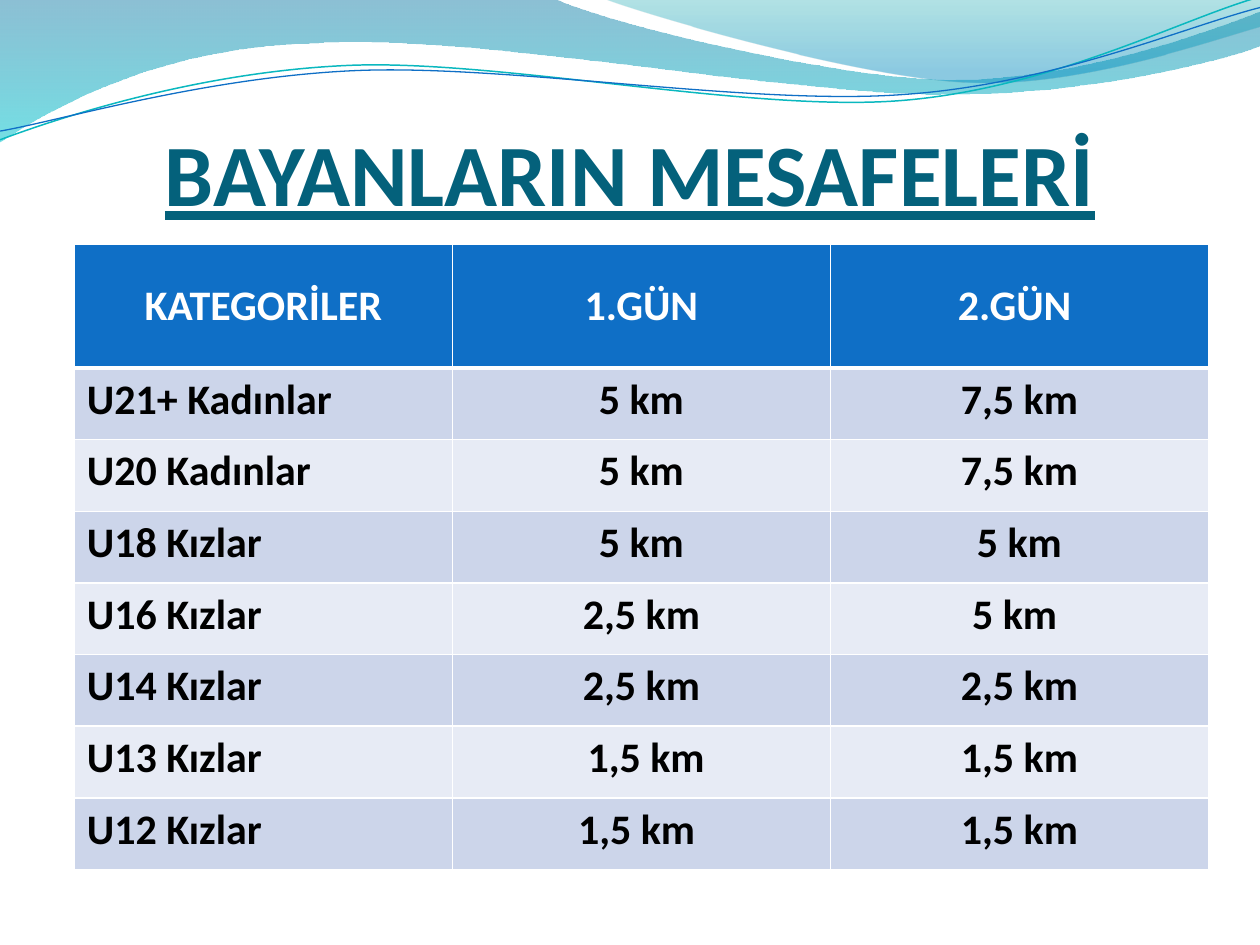
"""Build the slide listing the women's race distances by category."""
from lxml import etree
from pptx import Presentation
from pptx.dml.color import RGBColor
from pptx.enum import text
from pptx.oxml.ns import qn
from pptx.util import Pt

FONT = "Calibri"
WHITE = RGBColor(0xFF, 0xFF, 0xFF)
BLACK = RGBColor(0x00, 0x00, 0x00)
TITLE_TEAL = RGBColor(0x04, 0x61, 0x7B)
BLUE = RGBColor(0x0F, 0x6F, 0xC6)
CYAN = RGBColor(0x0A, 0xB8, 0xBF)
BAND_DARK = RGBColor(0xCC, 0xD5, 0xEA)
BAND_LIGHT = RGBColor(0xE7, 0xEB, 0xF5)
WAVE_TOP = RGBColor(0x00, 0x74, 0xA1)
WAVE_BOTTOM = RGBColor(0x00, 0xC6, 0xCF)
CREST_TOP = RGBColor(0x00, 0xA1, 0xA9)
CREST_BOTTOM = RGBColor(0x00, 0x8B, 0xBF)

HEADER_HEIGHT, ROW_HEIGHT, COLUMN_WIDTH = 70.5, 40.95, 216

WAVE = [
    [(0, 0)],
    [(316.8, -0.7)],
    [(342.7, 12.2), (478.1, 45.4), (545.8, 45.4)],
    [(614.2, 45.4), (689.8, 18.7), (720, 6.5)],
    [(720.7, 25.9)],
    [(707.8, 31.7), (626.4, 54.7), (537.1, 54)],
    [(447.8, 54), (275, 20.2), (185, 24.5)],
    [(92.9, 25.9), (33.1, 59.8), (-0.7, 81.4)],
    [(0, 0)],
]
CREST = [
    [(344.9, -0.7)],
    [(366.5, 7.9), (491, 44.6), (553.7, 46.8)],
    [(616.3, 49.7), (691.9, 23), (720, 15.1)],
    [(720, 0)],
    [(344.9, -0.7)],
]
CYAN_LINE = [
    [(0, 79.9)],
    [(34.6, 67), (113.8, 41), (199.4, 37.4)],
    [(284.4, 33.8), (427, 64.1), (513.4, 57.6)],
    [(599.8, 51.1), (675.4, 10.8), (718.6, -1.4)],
]
BLUE_LINE = [
    [(0, 74.9)],
    [(33.8, 69.1), (118.1, 43.9), (203.8, 40.3)],
    [(290.2, 36.7), (429.8, 60.5), (516.2, 54)],
    [(601.9, 48.2), (677.5, 15.1), (720, 4.3)],
]

DISTANCES = [
    ("KATEGORİLER", "1.GÜN", "2.GÜN "),
    ("U21+ Kadınlar", "5 km", "7,5 km"),
    ("U20 Kadınlar", "5 km", "7,5 km"),
    ("U18 Kızlar", "5 km", "5 km"),
    ("U16 Kızlar", "2,5 km", "5 km "),
    ("U14 Kızlar", "2,5 km", "2,5 km"),
    ("U13 Kızlar", " 1,5 km", "1,5 km"),
    ("U12 Kızlar", "1,5 km ", "1,5 km"),
]


def bend_segments(shape, segments):
    """Merge the three lines of every cubic segment into one Bezier curve."""
    lines = iter(list(shape._element.iter(qn("a:lnTo"))))
    for segment in segments[1:]:
        first, *others = [next(lines) for _ in segment]
        if others:
            first.addprevious(curve := etree.Element(qn("a:cubicBezTo")))
            for line in (first, *others):
                curve.append(line[0])
                line.getparent().remove(line)


def add_outline(slide, segments, close):
    """Add an unshadowed freeform along straight and cubic segments."""
    start, *others = [(Pt(x), Pt(y)) for segment in segments for x, y in segment]
    builder = slide.shapes.build_freeform(*start)
    builder.add_line_segments(others, close=close)
    shape = builder.convert_to_shape()
    bend_segments(shape, segments)
    shape.shadow.inherit = False
    return shape


def add_wave(slide, segments, stops):
    """Add a closed wave with a translucent top-to-bottom gradient."""
    shape = add_outline(slide, segments, True)
    shape.line.fill.background()
    shape.fill.gradient()
    shape.fill.gradient_angle = 270
    for stop, (position, color, _) in zip(shape.fill.gradient_stops, stops):
        stop.position = position
        stop.color.rgb = color
    for element, (_, _, opacity) in zip(shape._element.iter(qn("a:srgbClr")), stops):
        etree.SubElement(element, qn("a:alpha"), val=str(opacity * 1000))


def add_wave_line(slide, segments, color, width):
    """Add an open curved line."""
    shape = add_outline(slide, segments, False)
    shape.fill.background()
    shape.line.color.rgb = color
    shape.line.width = Pt(width)


def style_paragraph(paragraph, size, color, alignment):
    """Apply the bold slide font to a paragraph."""
    paragraph.alignment = alignment
    paragraph.font.name = FONT
    paragraph.font.size = Pt(size)
    paragraph.font.bold = True
    paragraph.font.color.rgb = color


def set_title(slide, wording):
    """Place the underlined title in front of the waves."""
    title = slide.shapes.title
    title.left, title.top, title.width, title.height = Pt(36), Pt(55.5), Pt(648), Pt(72.7)
    frame = title.text_frame
    frame.text = wording
    frame.auto_size = text.MSO_AUTO_SIZE.NONE
    frame.vertical_anchor = text.MSO_ANCHOR.BOTTOM
    frame.margin_left = frame.margin_right = frame.margin_bottom = 0
    frame.margin_top = Pt(3.6)
    paragraph = frame.paragraphs[0]
    style_paragraph(paragraph, 50, TITLE_TEAL, text.PP_ALIGN.CENTER)
    paragraph.font.underline = True
    slide.shapes._spTree.append(title._element)


def set_borders(cell, top, bottom):
    """Draw white borders round a cell, with the given top and bottom widths."""
    properties = cell._tc.get_or_add_tcPr()
    for side, width in (("L", 1), ("R", 1), ("T", top), ("B", bottom)):
        line = etree.SubElement(properties, qn(f"a:ln{side}"), w=str(Pt(width)))
        fill = etree.SubElement(line, qn("a:solidFill"))
        etree.SubElement(fill, qn("a:srgbClr"), val=str(WHITE))


def fill_cell(cell, wording, row, column):
    """Write and format one cell according to its row and column."""
    header = row == 0
    set_borders(cell, 3 if row == 1 else 1, 3 if header else 1)
    cell.fill.solid()
    cell.fill.fore_color.rgb = BLUE if header else BAND_DARK if row % 2 else BAND_LIGHT
    cell.vertical_anchor = text.MSO_ANCHOR.MIDDLE if header else text.MSO_ANCHOR.TOP
    cell.text = wording
    centred = header or column > 0
    style_paragraph(cell.text_frame.paragraphs[0], 24, WHITE if header else BLACK,
                    text.PP_ALIGN.CENTER if centred else text.PP_ALIGN.LEFT)


def add_distance_table(slide, rows):
    """Add the table of categories and daily distances."""
    columns = len(rows[0])
    height = HEADER_HEIGHT + ROW_HEIGHT * (len(rows) - 1)
    table = slide.shapes.add_table(len(rows), columns, Pt(42.5), Pt(139.8),
                                   Pt(COLUMN_WIDTH * columns), Pt(height)).table
    for column in table.columns:
        column.width = Pt(COLUMN_WIDTH)
    for row, wordings in enumerate(rows):
        table.rows[row].height = Pt(ROW_HEIGHT if row else HEADER_HEIGHT)
        for column, wording in enumerate(wordings):
            fill_cell(table.cell(row, column), wording, row, column)


def main():
    """Build and save the presentation."""
    presentation = Presentation()
    presentation.slide_width, presentation.slide_height = Pt(720), Pt(540)
    slide = presentation.slides.add_slide(presentation.slide_layouts[5])
    add_wave(slide, WAVE, [(0, WAVE_TOP, 45), (1, WAVE_BOTTOM, 55)])
    add_wave(slide, CREST, [(0, CREST_TOP, 30), (0.8, CREST_BOTTOM, 45)])
    add_wave_line(slide, CYAN_LINE, CYAN, 0.85)
    add_wave_line(slide, BLUE_LINE, BLUE, 0.75)
    set_title(slide, "BAYANLARIN MESAFELERİ")
    add_distance_table(slide, DISTANCES)
    presentation.save("out.pptx")


if __name__ == "__main__":
    main()
